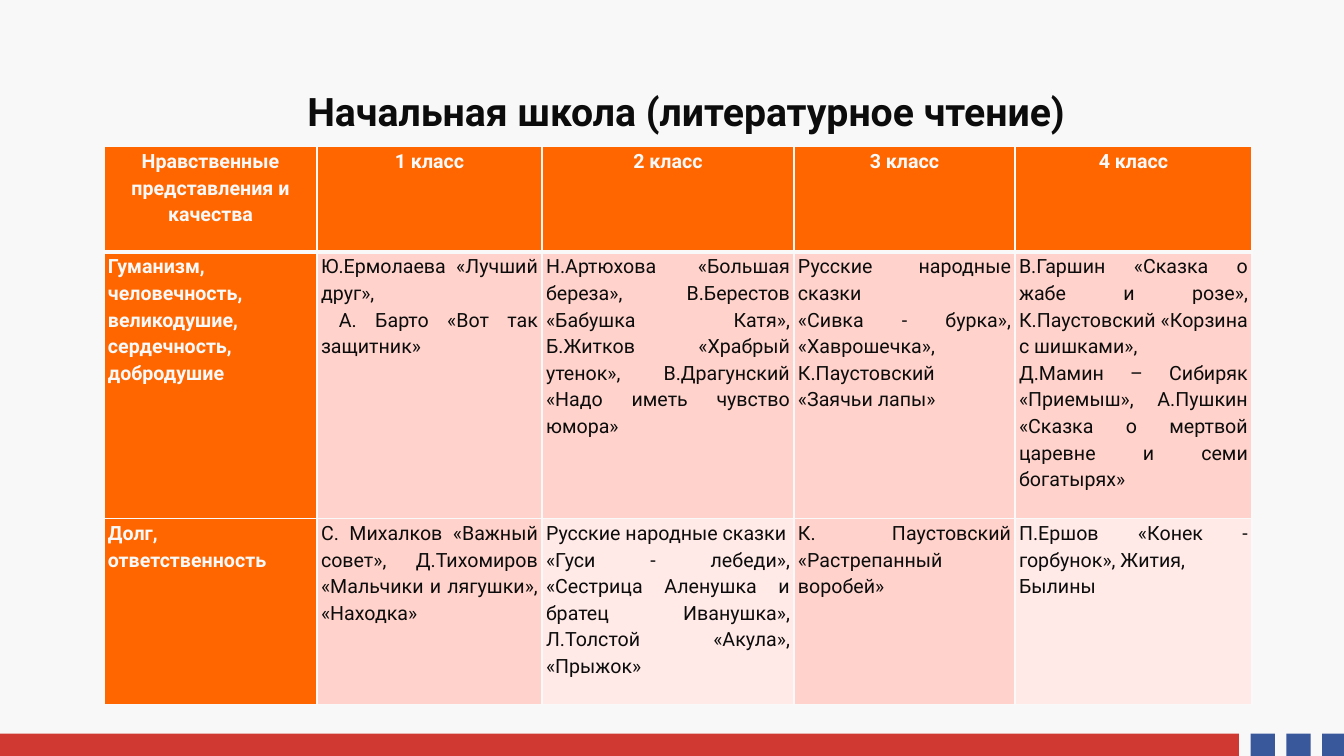
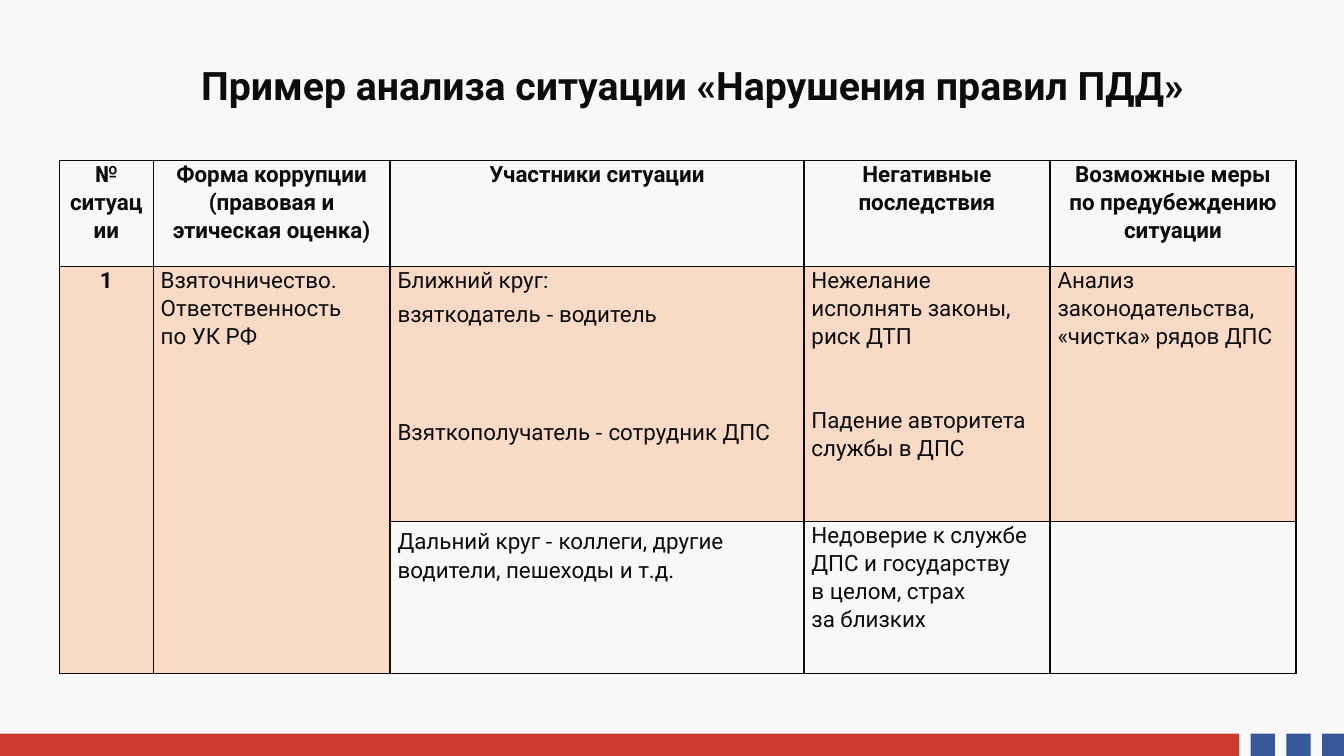
from lxml.etree import SubElement
from pptx import Presentation
from pptx.dml.color import RGBColor
from pptx.enum.shapes import MSO_SHAPE
from pptx.enum.text import MSO_ANCHOR, PP_ALIGN
from pptx.oxml.ns import qn
from pptx.util import Cm, Pt

RECT = MSO_SHAPE.RECTANGLE
MIDDLE = MSO_ANCHOR.MIDDLE
CENTER, LEFT, JUSTIFY = PP_ALIGN.CENTER, PP_ALIGN.LEFT, PP_ALIGN.JUSTIFY

SLIDE_W, SLIDE_H = 33.87, 19.05
FONT, DASH_FONT = "Roboto", "Noto Sans CJK KR"
DASH = "- "
INK, PAPER, PALE = "0C0C0C", "F8F8F8", "FAF9F9"
RED, BLUE = "C70A00", "0A3085"
ORANGE, PINK, BLUSH = "FF6600", "FFD3CC", "FFEAE7"


def set_color(fill, color, alpha=100):
    fill.solid()
    fill.fore_color.rgb = RGBColor.from_string(color)
    if alpha < 100:
        clr = fill._xPr.find(qn("a:solidFill"))[0]
        SubElement(clr, qn("a:alpha"), val=str(alpha * 1000))


def set_attrs(obj, values):
    for name, value in values.items():
        setattr(obj, name, value)


def add_run(p, text, size, color, bold, font=FONT):
    r = p.add_run()
    r.text = text
    set_attrs(r.font, {"name": font, "size": Pt(size), "bold": bold})
    set_color(r.font.fill, color)


def add_text(p, text, size, color, bold):
    for i, line in enumerate(text.split("\n")):
        if i:
            p.add_line_break()
            SubElement(p._p[-1], qn("a:rPr"), sz=str(size * 100))
        before, dash, after = line.partition(" " + DASH)
        if dash and size == SITUATION["size"]:
            add_run(p, before + " ", size, color, bold)
            add_run(p, DASH, size, color, bold, DASH_FONT)
            add_run(p, after, size, color, bold)
        else:
            add_run(p, line, size, color, bold)


def add_footer(slide, master):
    top, height = 18.49, 0.56
    bars = [(0, 31.22, RED)]
    for i in range(3):
        left = 31.52 + 0.9 * i
        bars.append((left, min(0.61, SLIDE_W - left), BLUE))
    for i, (left, width, color) in enumerate(bars):
        sp = slide.shapes.add_shape(RECT, Cm(left), Cm(top), Cm(width), Cm(height))
        sp.shadow.inherit = False
        set_color(sp.fill, color, 80)
        sp.line.fill.background()
        sp._element.nvSpPr.cNvPr.set("id", str(100 + i))
        master.shapes._spTree.insert(2 + i, sp._element)


def add_title(slide, text, left, top, width, height):
    sp = slide.shapes.title
    set_attrs(sp, {"left": Cm(left), "top": Cm(top),
                   "width": Cm(width), "height": Cm(height)})
    tf = sp.text_frame
    set_attrs(tf, {"word_wrap": True, "vertical_anchor": MIDDLE})
    p = tf.paragraphs[0]
    set_attrs(p, {"alignment": CENTER, "line_spacing": 0.9})
    add_run(p, text, 28, INK, True)


def set_borders(cell, color, widths):
    tcPr = cell._tc.get_or_add_tcPr()
    for side, width in zip("LRTB", widths):
        ln = SubElement(tcPr, qn("a:ln" + side), w=str(Pt(width)))
        fill = SubElement(ln, qn("a:solidFill"))
        SubElement(fill, qn("a:srgbClr"), val=color)


def fill_cell(cell, paras, style, align, color, bold):
    margin = Cm(style["margin"])
    set_attrs(cell, {"margin_left": margin, "margin_right": margin,
                     "margin_top": 0, "margin_bottom": 0})
    tf = cell.text_frame
    for i, (text, before, indent) in enumerate(paras):
        p = tf.add_paragraph() if i else tf.paragraphs[0]
        set_attrs(p, {"alignment": align, "line_spacing": style["spacing"],
                      "space_before": Pt(before)})
        if indent:
            p._p.get_or_add_pPr().set("indent", str(Cm(indent)))
        add_text(p, text, style["size"], color, bold)


def add_table(slide, left, top, cols, rows, cells, style):
    frame = slide.shapes.add_table(len(rows), len(cols), Cm(left), Cm(top),
                                   Cm(sum(cols)), Cm(sum(rows)))
    table = frame.table
    set_attrs(table, {"first_row": False, "horz_banding": False})
    for col, width in zip(table.columns, cols):
        col.width = Cm(width)
    for row, height in zip(table.rows, rows):
        row.height = Cm(height)
    for col in style["merged"]:
        table.cell(1, col).merge(table.cell(2, col))
    for r, row in enumerate(cells):
        for c, paras in enumerate(row):
            cell = table.cell(r, c)
            rule = style["rule"]
            set_borders(cell, style["border"],
                        (1, 1, rule if r == 1 else 1, rule if r == 0 else 1))
            fill = style["fill"](r, c)
            if fill:
                set_color(cell.fill, *fill)
            else:
                cell.fill.background()
            head = r == 0 or c == 0
            align = CENTER if r == 0 else style["side_align"] if c == 0 else style["align"]
            fill_cell(cell, paras, style, align,
                      style["head_color"] if head else INK, head)


def para(text, before=0, indent=0):
    return text, before, indent


def reading_fill(r, c):
    if r == 0 or c == 0:
        return (ORANGE,)
    return (BLUSH,) if r == 2 and c in (2, 4) else (PINK,)


def situation_fill(r, c):
    return (ORANGE, 20) if r == 1 or (r == 2 and c < 2) else None


READING = {"size": 14, "spacing": 1.15, "margin": 0.1, "border": PALE, "rule": 3,
           "head_color": PALE, "align": JUSTIFY, "side_align": JUSTIFY,
           "fill": reading_fill, "merged": ()}
SITUATION = {"size": 16, "spacing": 1.07, "margin": 0.19, "border": INK, "rule": 1,
             "head_color": INK, "align": LEFT, "side_align": CENTER,
             "fill": situation_fill, "merged": (0, 1)}

READING_CELLS = [
    [[para("Нравственные представления и качества")]]
    + [[para(f"{n} класс")] for n in range(1, 5)],
    [
        [para("Гуманизм, человечность, великодушие, сердечность, добродушие")],
        [para("Ю.Ермолаева «Лучший друг»,"),
         para("А. Барто «Вот так защитник»", indent=0.45)],
        [para("Н.Артюхова «Большая береза», В.Берестов «Бабушка Катя», Б.Житков "
              "«Храбрый утенок», В.Драгунский «Надо иметь чувство юмора»")],
        [para("Русские народные сказки"),
         para("«Сивка - бурка», «Хаврошечка», К.Паустовский «Заячьи лапы»")],
        [para("В.Гаршин «Сказка о жабе и розе», К.Паустовский «Корзина с шишками»,"),
         para("Д.Мамин – Сибиряк «Приемыш», А.Пушкин «Сказка о мертвой царевне "
              "и семи богатырях»")],
    ],
    [
        [para("Долг, ответственность")],
        [para("С. Михалков «Важный совет», Д.Тихомиров «Мальчики и лягушки», «Находка»")],
        [para("Русские народные сказки"),
         para("«Гуси - лебеди», «Сестрица Аленушка и братец Иванушка», "
              "Л.Толстой «Акула», «Прыжок»")],
        [para("К. Паустовский «Растрепанный воробей»")],
        [para("П.Ершов «Конек - горбунок», Жития,"), para("Былины")],
    ],
]

SITUATION_CELLS = [
    [[para(text)] for text in (
        "№ ситуации", "Форма коррупции (правовая и этическая оценка)",
        "Участники ситуации", "Негативные последствия",
        "Возможные меры\nпо предубеждению ситуации")],
    [
        [para("1")],
        [para("Взяточничество. Ответственность\nпо УК РФ")],
        [para("Ближний круг:"), para("взяткодатель - водитель"),
         para("Взяткополучатель - сотрудник ДПС", before=60)],
        [para("Нежелание исполнять законы, риск ДТП"),
         para("Падение авторитета службы в ДПС", before=40)],
        [para("Анализ законодательства, «чистка» рядов ДПС")],
    ],
    [
        [],
        [],
        [para("Дальний круг - коллеги, другие водители, пешеходы и т.д.")],
        [para("Недоверие к службе ДПС и государству\nв целом, страх\nза близких")],
        [],
    ],
]


def reading_slide(slide):
    add_title(slide, "Начальная школа (литературное чтение)", 3.33, 1.02, 27.91, 3.68)
    add_table(slide, 2.62, 3.7, (5.37, 5.67, 6.35, 5.57, 5.97),
              (2.65, 6.72, 4.69), READING_CELLS, READING)


def situation_slide(slide):
    add_title(slide, "Пример анализа ситуации «Нарушения правил ПДД»",
              3.8, 1.02, 27.3, 2.41)
    add_table(slide, 1.5, 4.04, (2.36, 5.97, 10.43, 6.2, 6.2),
              (2.67, 6.43, 3.84), SITUATION_CELLS, SITUATION)


def main():
    prs = Presentation()
    set_attrs(prs, {"slide_width": Cm(SLIDE_W), "slide_height": Cm(SLIDE_H)})
    master = prs.slide_master
    set_color(master.background.fill, PAPER)
    layout = prs.slide_layouts[5]
    slides = [prs.slides.add_slide(layout) for _ in range(2)]
    add_footer(slides[0], master)
    reading_slide(slides[0])
    situation_slide(slides[1])
    prs.save("out.pptx")


if __name__ == "__main__":
    main()
